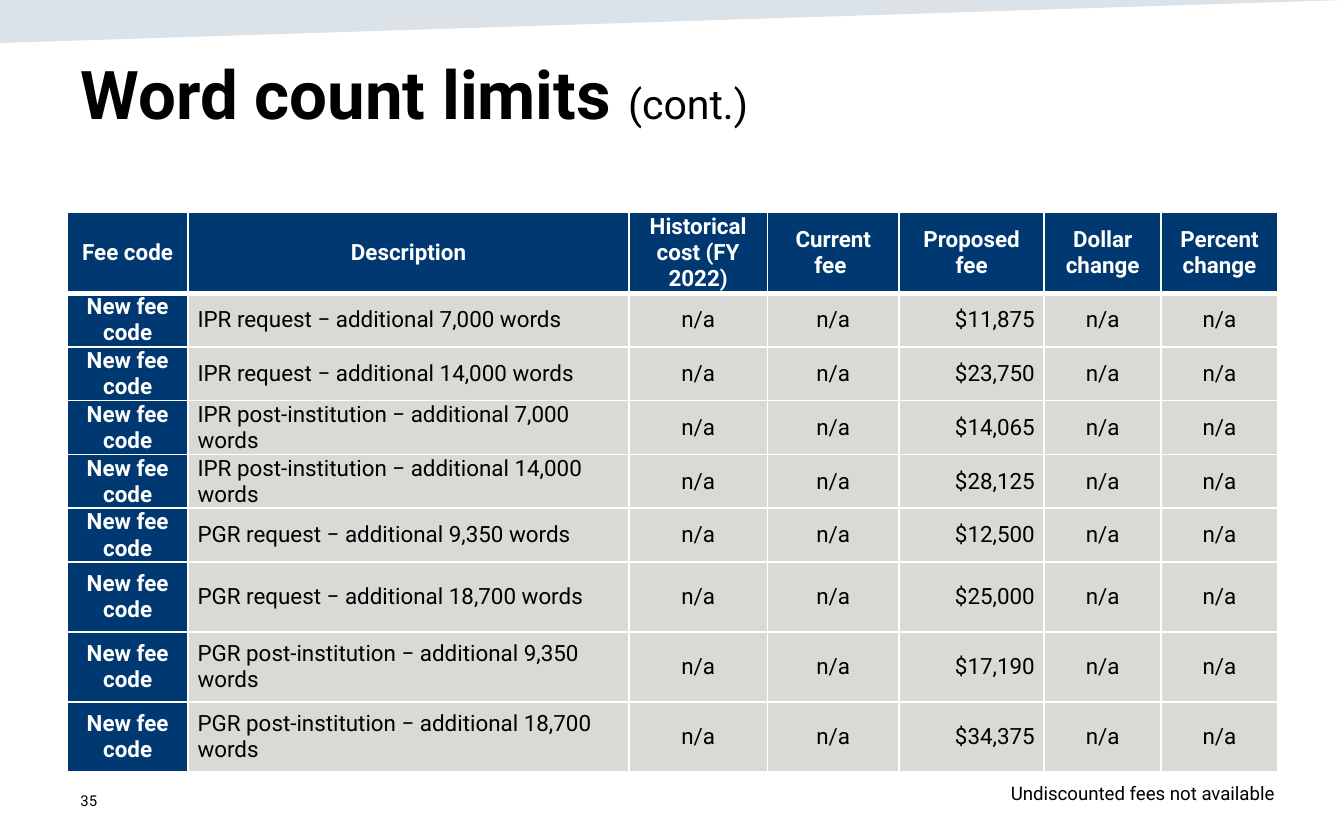
from dataclasses import dataclass

from lxml.etree import SubElement
from pptx import Presentation
from pptx.dml.color import RGBColor as Color
from pptx.enum.text import MSO_ANCHOR as Anchor, PP_ALIGN as Align
from pptx.oxml import parse_xml
from pptx.oxml.ns import nsdecls, qn
from pptx.util import Inches, Pt


@dataclass(frozen=True)
class Theme:
    font: str = "Roboto"
    text: str = "000000"
    white: str = "FFFFFF"
    navy: str = "003971"
    grey: str = "D9D9D6"
    band: str = "164469"
    band_alpha: int = 15
    title_size: int = 36
    subtitle_size: int = 22
    table_size: int = 12
    note_size: int = 10
    number_size: int = 8


HEADERS = ["Fee code", "Description", "Historical cost (FY 2022)", "Current fee ",
           "Proposed fee", "Dollar change", "Percent change"]
FEES = [
    ("IPR request ‒ additional 7,000 words", "$11,875"),
    ("IPR request ‒ additional 14,000 words", "$23,750"),
    ("IPR post-institution ‒ additional 7,000 words", "$14,065"),
    ("IPR post-institution ‒ additional 14,000 words", "$28,125"),
    ("PGR request ‒ additional 9,350 words", "$12,500"),
    ("PGR request ‒ additional 18,700 words", "$25,000"),
    ("PGR post-institution ‒ additional 9,350 words", "$17,190"),
    ("PGR post-institution ‒ additional 18,700 words", "$34,375"),
]
COLUMN_WIDTHS = [0.9, 3.28, 1.03, 0.98, 1.08, 0.87, 0.87]
ROW_HEIGHTS = [0.58] + [0.39] * 5 + [0.52] * 3
COLUMN_ALIGN = [Align.CENTER, Align.LEFT, Align.CENTER, Align.CENTER,
                Align.RIGHT, Align.CENTER, Align.CENTER]


class SlideWriter:
    def __init__(self, page, theme):
        self.page = page
        self.theme = theme

    def span(self, para, text, size, color, bold=False):
        span = para.add_run()
        span.text = text
        font = span.font
        font.name, font.size, font.bold = self.theme.font, Pt(size), bold
        font.color.rgb = Color.from_string(color)

    def text(self, left, top, width, height, spans, align=Align.LEFT, anchor=Anchor.TOP):
        """Add a text box; spans holds (text, size, bold) for each run."""
        box = self.page.shapes.add_textbox(*map(Inches, (left, top, width, height)))
        frame = box.text_frame
        frame.word_wrap = True
        frame.vertical_anchor = anchor
        para = frame.paragraphs[0]
        para.alignment = align
        for text, size, bold in spans:
            self.span(para, text, size, self.theme.text, bold)

    def wedge(self, points):
        """Add a translucent, unlined polygon."""
        corners = [(Inches(x), Inches(y)) for x, y in points]
        builder = self.page.shapes.build_freeform(*corners[0], scale=1.0)
        builder.add_line_segments(corners[1:], close=True)
        shape = builder.convert_to_shape()
        shape.shadow.inherit = False
        shape.line.fill.background()
        shape.fill.solid()
        shape.fill.fore_color.rgb = Color.from_string(self.theme.band)
        color = shape.fill._xPr.find(f"{qn('a:solidFill')}/{qn('a:srgbClr')}")
        SubElement(color, qn("a:alpha"), val=str(self.theme.band_alpha * 1000))

    def borders(self, cell, bottom):
        """Draw white cell borders, with the bottom one in its own width."""
        properties = cell._tc.get_or_add_tcPr()
        widths = {"lnL": 1, "lnR": 1, "lnT": 1, "lnB": bottom}
        for index, (side, width) in enumerate(widths.items()):
            properties.insert(index, parse_xml(
                f'<a:{side} {nsdecls("a")} w="{Pt(width)}"><a:solidFill>'
                f'<a:srgbClr val="{self.theme.white}"/></a:solidFill></a:{side}>'))

    def cell(self, cell, text, align, strong, bottom):
        theme = self.theme
        cell.fill.solid()
        cell.fill.fore_color.rgb = Color.from_string(theme.navy if strong else theme.grey)
        cell.margin_left = cell.margin_right = Inches(0.07)
        cell.margin_top = cell.margin_bottom = 0
        cell.vertical_anchor = Anchor.MIDDLE
        para = cell.text_frame.paragraphs[0]
        para.alignment = align
        self.span(para, text, theme.table_size, theme.white if strong else theme.text, strong)
        self.borders(cell, bottom)

    def table(self, left, top, rows, widths, heights, aligns):
        """Add a table whose first row and first column are headings."""
        table = self.page.shapes.add_table(
            len(rows), len(widths), Inches(left), Inches(top),
            Inches(sum(widths)), Inches(sum(heights))).table
        table.horz_banding = False
        table.first_col = True
        for column, width in zip(table.columns, widths):
            column.width = Inches(width)
        for r, (values, height) in enumerate(zip(rows, heights)):
            table.rows[r].height = Inches(height)
            for c, value in enumerate(values):
                header = r == 0
                self.cell(table.cell(r, c), value, Align.CENTER if header else aligns[c],
                          header or c == 0, 3 if header else 1)


def main():
    deck = Presentation()
    deck.slide_width, deck.slide_height = Inches(10), Inches(6.25)
    theme = Theme()
    writer = SlideWriter(deck.slides.add_slide(deck.slide_layouts[6]), theme)

    writer.wedge([(0, 0), (0, 0.32), (10, 0)])
    writer.text(0.5, 5.79, 2.25, 0.33, [("35", theme.number_size, False)],
                anchor=Anchor.MIDDLE)
    writer.text(0.5, 0.34, 9, 1.04, [("Word count limits ", theme.title_size, True),
                                     ("(cont.)", theme.subtitle_size, False)])
    rows = [HEADERS] + [["New fee code", description, "n/a", "n/a", fee, "n/a", "n/a"]
                        for description, fee in FEES]
    writer.table(0.5, 1.58, rows, COLUMN_WIDTHS, ROW_HEIGHTS, COLUMN_ALIGN)
    writer.text(0.4, 5.77, 9.18, 0.27,
                [("Undiscounted fees not available", theme.note_size, False)], Align.RIGHT)
    deck.save("out.pptx")


if __name__ == "__main__":
    main()
